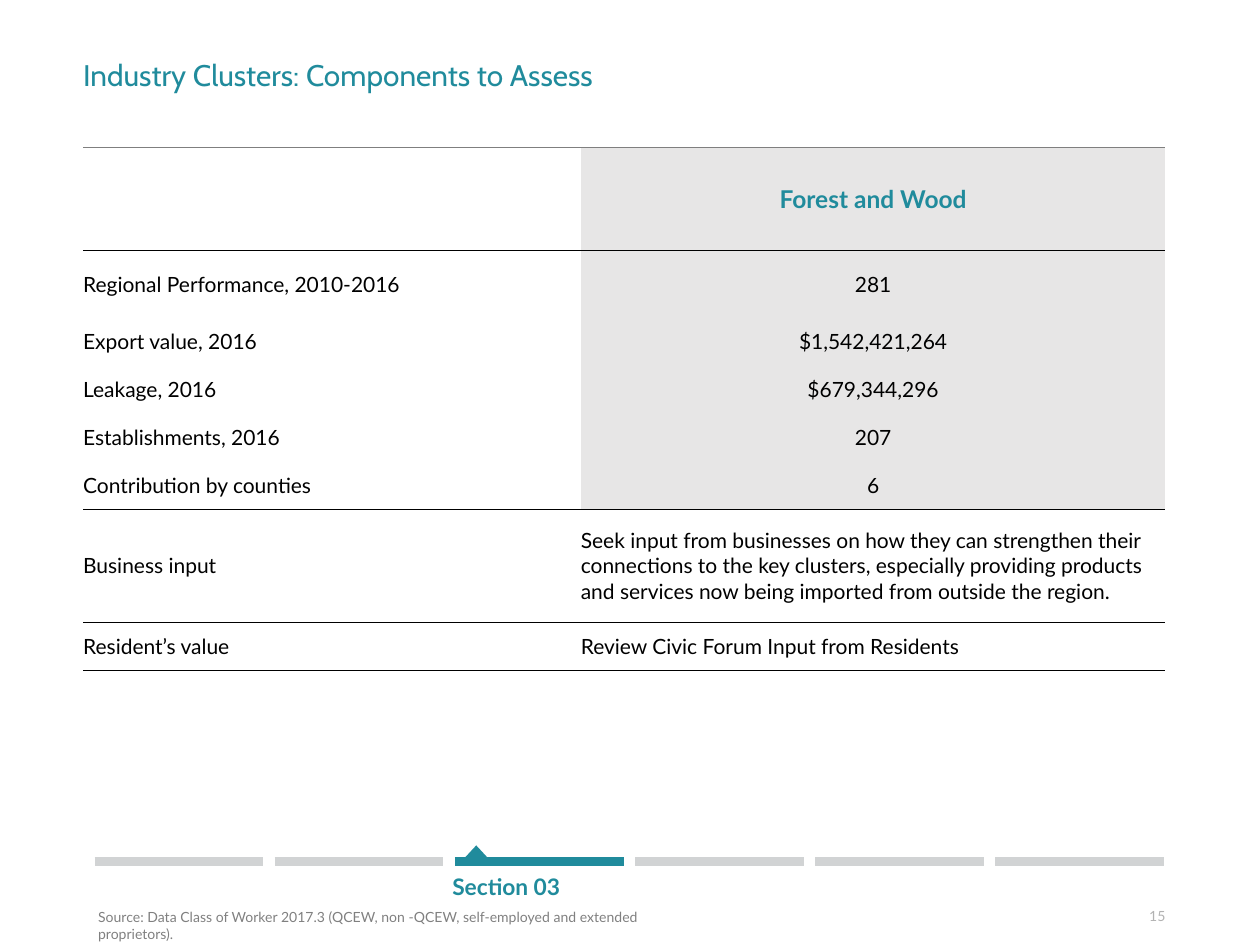
"""Build the industry clusters slide: a component table above a section progress bar."""
from lxml import etree
from pptx import Presentation
from pptx.dml.color import RGBColor
from pptx.enum.shapes import MSO_CONNECTOR, MSO_SHAPE
from pptx.enum.text import MSO_ANCHOR, MSO_AUTO_SIZE, PP_ALIGN
from pptx.oxml.ns import qn
from pptx.util import Inches, Pt

LEFT, CENTER, RIGHT = PP_ALIGN.LEFT, PP_ALIGN.CENTER, PP_ALIGN.RIGHT
TOP, MIDDLE, BOTTOM = MSO_ANCHOR.TOP, MSO_ANCHOR.MIDDLE, MSO_ANCHOR.BOTTOM
STRAIGHT, TRIANGLE = MSO_CONNECTOR.STRAIGHT, MSO_SHAPE.ISOSCELES_TRIANGLE
NO_AUTOFIT = MSO_AUTO_SIZE.NONE
COLORS = {"teal": "208B9C", "black": "000000", "shade": "E7E6E6", "rule": "7F7F7F",
          "bar": "D1D3D4", "source": "808080", "number": "B2B2B2"}


def write(frame, text, size, color, font="Lato", bold=False, align=LEFT, **paragraph_format):
    paragraph = frame.paragraphs[0]
    for name, value in {"alignment": align, **paragraph_format}.items():
        setattr(paragraph, name, value)
    run = paragraph.add_run()
    run.text = text
    for name, value in {"name": font, "size": Pt(size), "bold": bold}.items():
        setattr(run.font, name, value)
    run.font.color.rgb = RGBColor.from_string(COLORS[color])
    return paragraph


def set_frame(frame, anchor=TOP, side=0, edge=0):
    values = {"word_wrap": True, "auto_size": NO_AUTOFIT, "vertical_anchor": anchor,
              "margin_left": Inches(side), "margin_right": Inches(side),
              "margin_top": Inches(edge), "margin_bottom": Inches(edge)}
    for name, value in values.items():
        setattr(frame, name, value)
    return frame


presentation = Presentation()
presentation.slide_width, presentation.slide_height = Inches(10), Inches(7.5)
slide = presentation.slides.add_slide(presentation.slide_layouts[5])
shapes = slide.shapes

title = shapes.title
title_box = {"left": 0.66, "top": 0.49, "width": 8.5, "height": 0.49}
for name, value in title_box.items():
    setattr(title, name, Inches(value))
write(set_frame(title.text_frame), "Industry Clusters: Components to Assess", 17, "teal",
      font="Cabin", line_spacing=0.85)

rows = [
    ("", "Forest and Wood", 0.82),
    ("Regional Performance, 2010-2016", "281", 0.53),
    ("Export value, 2016", "$1,542,421,264", 0.38),
    ("Leakage, 2016", "$679,344,296", 0.38),
    ("Establishments, 2016", "207", 0.38),
    ("Contribution by counties", "6", 0.38),
    ("Business input", "Seek input from businesses on how they can strengthen their connections "
     "to the key clusters, especially providing products and services now being imported "
     "from outside the region.", 0.9),
    ("Resident’s value", "Review Civic Forum Input from Residents", 0.38),
]
last_shaded_row = 5
ruled_below = {0, 5, 6, 7}
table = shapes.add_table(len(rows), 2, Inches(0.66), Inches(1.17),
                         Inches(8.59), Inches(4.15)).table
table.first_row = table.horz_banding = False
for column, width in zip(table.columns, (3.95, 4.64)):
    column.width = Inches(width)
for row_index, (label, entry, height) in enumerate(rows):
    table.rows[row_index].height = Inches(height)
    for column_index, text in enumerate((label, entry)):
        cell = table.cell(row_index, column_index)
        shaded = column_index == 1 and row_index <= last_shaded_row
        margins = dict.fromkeys(("margin_left", "margin_right", "margin_top", "margin_bottom"), 0)
        for name, value in {**margins, "vertical_anchor": MIDDLE}.items():
            setattr(cell, name, value)
        if text:
            header = row_index == 0
            write(cell.text_frame, text, 14 if header else 12, "teal" if header else "black",
                  bold=header, align=CENTER if shaded else LEFT)
        borders = {"lnL": None, "lnR": None, "lnT": None, "lnB": None}
        if row_index == 0:
            borders["lnT"] = ("rule", 1)
        elif row_index - 1 in ruled_below:
            borders["lnT"] = ("black", 0.5)
        if row_index in ruled_below:
            borders["lnB"] = ("black", 0.5)
        properties = cell._tc.get_or_add_tcPr()
        for tag, border in borders.items():
            line = etree.SubElement(properties, qn(f"a:{tag}"))
            if border:
                color, width = border
                line.set("w", str(Pt(width)))
                fill = etree.SubElement(line, qn("a:solidFill"))
                etree.SubElement(fill, qn("a:srgbClr"), val=COLORS[color])
            else:
                line.set("w", "0")
                etree.SubElement(line, qn("a:noFill"))
        if shaded:
            cell.fill.solid()
            cell.fill.fore_color.rgb = RGBColor.from_string(COLORS["shade"])
        else:
            cell.fill.background()

section_count, current_section = 6, 2
bar_left, bar_step, bar_length, bar_y = 0.75, 1.43, 1.34, 6.84
for index in range(section_count):
    left = bar_left + index * bar_step
    bar = shapes.add_connector(STRAIGHT, Inches(left), Inches(bar_y),
                               Inches(left + bar_length), Inches(bar_y))
    color = "teal" if index == current_section else "bar"
    bar.line.color.rgb = RGBColor.from_string(COLORS[color])
    bar.line.width = Pt(5.28)
    etree.SubElement(bar._element.spPr, qn("a:effectLst"))

marker = shapes.add_shape(TRIANGLE, Inches(3.66), Inches(6.71), Inches(0.24), Inches(0.13))
marker.shadow.inherit = False
marker.fill.solid()
marker.fill.fore_color.rgb = RGBColor.from_string(COLORS["teal"])
marker.line.fill.background()

section = shapes.add_textbox(Inches(2.14), Inches(6.88), Inches(2.67), Inches(0.33))
paragraph = write(set_frame(section.text_frame, edge=0.05), "Section 03", 13, "teal",
                  bold=True, line_spacing=Pt(15.5))
paragraph._p.get_or_add_pPr().set("marL", str(Inches(1.45)))

source = shapes.add_textbox(Inches(0.67), Inches(7.16), Inches(4.85), Inches(0.24))
paragraph = write(set_frame(source.text_frame, side=0.1, edge=0.05),
                  "Source: Data Class of Worker 2017.3 (QCEW, non -QCEW, self-employed and "
                  "extended proprietors).", 8, "source", space_before=Pt(2))
paragraph._p.get_or_add_pPr().set("marL", str(Inches(0.01)))

number = shapes.add_textbox(Inches(8.93), Inches(7.21), Inches(0.32), Inches(0.13))
write(set_frame(number.text_frame, anchor=BOTTOM), "15", 8, "number", align=RIGHT)

presentation.save("out.pptx")
